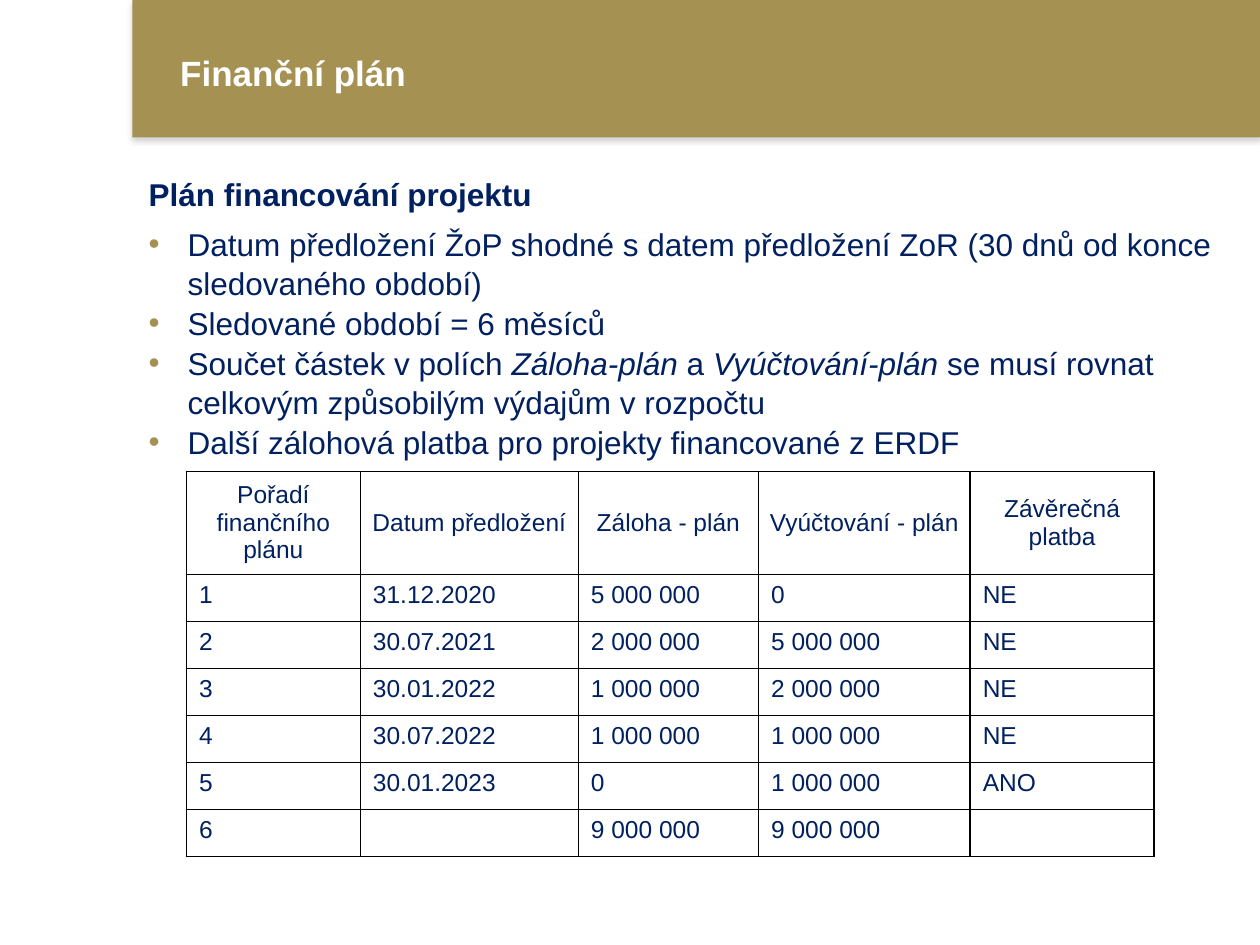
from pptx import Presentation, util as u
from pptx.dml.color import RGBColor
from pptx.enum import shapes, text
from pptx.oxml import parse_xml
from pptx.oxml.ns import nsdecls, qn
from lxml import etree

W, H = 10, 7.5
COLORS = {"gold": "A59253", "navy": "002060", "white": "FFFFFF",
          "border": "000000", "shadow": "808080"}
FONT = "Arial"

TITLE = "Finanční plán"
HEADING = "Plán financování projektu"
# Each bullet is a list of runs; every second run is italic.
BULLETS = [
    ["Datum předložení ŽoP shodné s datem předložení ZoR (30 dnů od konce sledovaného období)"],
    ["Sledované období = 6 měsíců"],
    ["Součet částek v polích ", "Záloha-plán ", "a ", "Vyúčtování-plán ",
     "se musí rovnat celkovým způsobilým výdajům v rozpočtu"],
    ["Další zálohová platba pro projekty financované z ERDF"],
]
HEADER = ["Pořadí finančního plánu", "Datum předložení", "Záloha - plán",
          "Vyúčtování - plán", "Závěrečná platba"]
ROWS = [
    ["1", "31.12.2020", "5 000 000", "0", "NE"],
    ["2", "30.07.2021", "2 000 000", "5 000 000", "NE"],
    ["3", "30.01.2022", "1 000 000", "2 000 000", "NE"],
    ["4", "30.07.2022", "1 000 000", "1 000 000", "NE"],
    ["5", "30.01.2023", "0", "1 000 000", "ANO"],
    ["6", "", "9 000 000", "9 000 000", ""],
]
COL_WIDTHS = [1.38, 1.73, 1.43, 1.68, 1.46]
TABLE_HEIGHT, HEADER_HEIGHT = 3.06, 0.82


def rgb(name):
    return RGBColor.from_string(COLORS[name])


def add_run(p, words, size=18, color="navy", bold=False, italic=False):
    r = p.add_run()
    r.text = words
    f = r.font
    f.name, f.size, f.bold, f.italic = FONT, u.Pt(size), bold, italic
    f.color.rgb = rgb(color)


def place(sp, left, top, width, height):
    sp.left, sp.top, sp.width, sp.height = map(u.Inches, (left, top, width, height))


def set_bullet(p, char=None, indent=0.0):
    """Give the paragraph a gold hanging bullet, or none at all."""
    pPr = p._p.get_or_add_pPr()
    pPr.set("marL", str(u.Inches(indent)))
    pPr.set("indent", str(-u.Inches(indent)))
    if char:
        color = etree.SubElement(pPr, qn("a:buClr"))
        etree.SubElement(color, qn("a:srgbClr"), val=COLORS["gold"])
        etree.SubElement(pPr, qn("a:buFont"), typeface=FONT)
        etree.SubElement(pPr, qn("a:buChar"), char=char)
    else:
        etree.SubElement(pPr, qn("a:buNone"))


def add_band(s):
    band = s.shapes.add_shape(shapes.MSO_SHAPE.RECTANGLE, 0, 0, 0, 0)
    place(band, 1.05, 0, W - 1.05, 1.09)
    band.fill.solid()
    band.fill.fore_color.rgb = rgb("gold")
    band.line.fill.background()
    band._element.spPr.append(parse_xml(
        f'<a:effectLst {nsdecls("a")}><a:outerShdw blurRad="{u.Pt(3.1)}" dist="{u.Pt(1.8)}" '
        f'dir="5400000" rotWithShape="0"><a:srgbClr val="{COLORS["shadow"]}">'
        '<a:alpha val="35000"/></a:srgbClr></a:outerShdw></a:effectLst>'))
    s.shapes._spTree.insert(2, band._element)  # behind the title


def add_title(s):
    sp = s.shapes.title
    place(sp, 1.33, 0.4, 8.17, 0.35)
    tf = sp.text_frame
    tf.auto_size = text.MSO_AUTO_SIZE.NONE
    tf.vertical_anchor = text.MSO_ANCHOR.MIDDLE
    p = tf.paragraphs[0]
    p.alignment = text.PP_ALIGN.LEFT
    add_run(p, TITLE, size=20, color="white", bold=True)


def add_body(s):
    sp = s.placeholders[1]
    place(sp, 1.08, 1.32, 8.84, 3.21)
    tf = sp.text_frame
    tf.auto_size = text.MSO_AUTO_SIZE.NONE
    p = tf.paragraphs[0]
    p.space_before, p.space_after, p.line_spacing = u.Pt(0), u.Pt(6), 1.05
    set_bullet(p)
    add_run(p, HEADING, bold=True)
    for runs in BULLETS:
        p = tf.add_paragraph()
        p.space_before, p.line_spacing = u.Pt(0), 1.05
        set_bullet(p, "•", 0.31)
        for i, words in enumerate(runs):
            add_run(p, words, italic=i % 2 == 1)


def set_borders(cell):
    tcPr = cell._tc.get_or_add_tcPr()
    for i, side in enumerate(("lnL", "lnR", "lnT", "lnB")):
        tcPr.insert(i, parse_xml(
            f'<a:{side} {nsdecls("a")} w="{u.Pt(1)}"><a:solidFill>'
            f'<a:srgbClr val="{COLORS["border"]}"/></a:solidFill></a:{side}>'))


def add_plan_table(s):
    grid = [HEADER] + ROWS
    frame = s.shapes.add_table(len(grid), len(HEADER), u.Inches(1.48), u.Inches(3.74),
                               u.Inches(sum(COL_WIDTHS)), u.Inches(TABLE_HEIGHT))
    table = frame.table
    table.first_row = table.horz_banding = False
    for col, width in zip(table.columns, COL_WIDTHS):
        col.width = u.Inches(width)
    for i, (row, values) in enumerate(zip(table.rows, grid)):
        row.height = u.Inches((TABLE_HEIGHT - HEADER_HEIGHT) / len(ROWS) if i else HEADER_HEIGHT)
        for cell, words in zip(row.cells, values):
            cell.fill.background()
            set_borders(cell)
            p = cell.text_frame.paragraphs[0]
            if i == 0:
                cell.margin_left = cell.margin_right = cell.margin_top = cell.margin_bottom = 0
                cell.vertical_anchor = text.MSO_ANCHOR.MIDDLE
                p.alignment = text.PP_ALIGN.CENTER
            if words:
                add_run(p, words, size=14)
            else:  # keeps an empty cell from stretching its row
                etree.SubElement(p._p, qn("a:endParaRPr"), sz="1400")


def main():
    prs = Presentation()
    prs.slide_width, prs.slide_height = u.Inches(W), u.Inches(H)
    s = prs.slides.add_slide(prs.slide_layouts[1])
    add_band(s)
    add_title(s)
    add_body(s)
    add_plan_table(s)
    prs.save("out.pptx")


if __name__ == "__main__":
    main()
